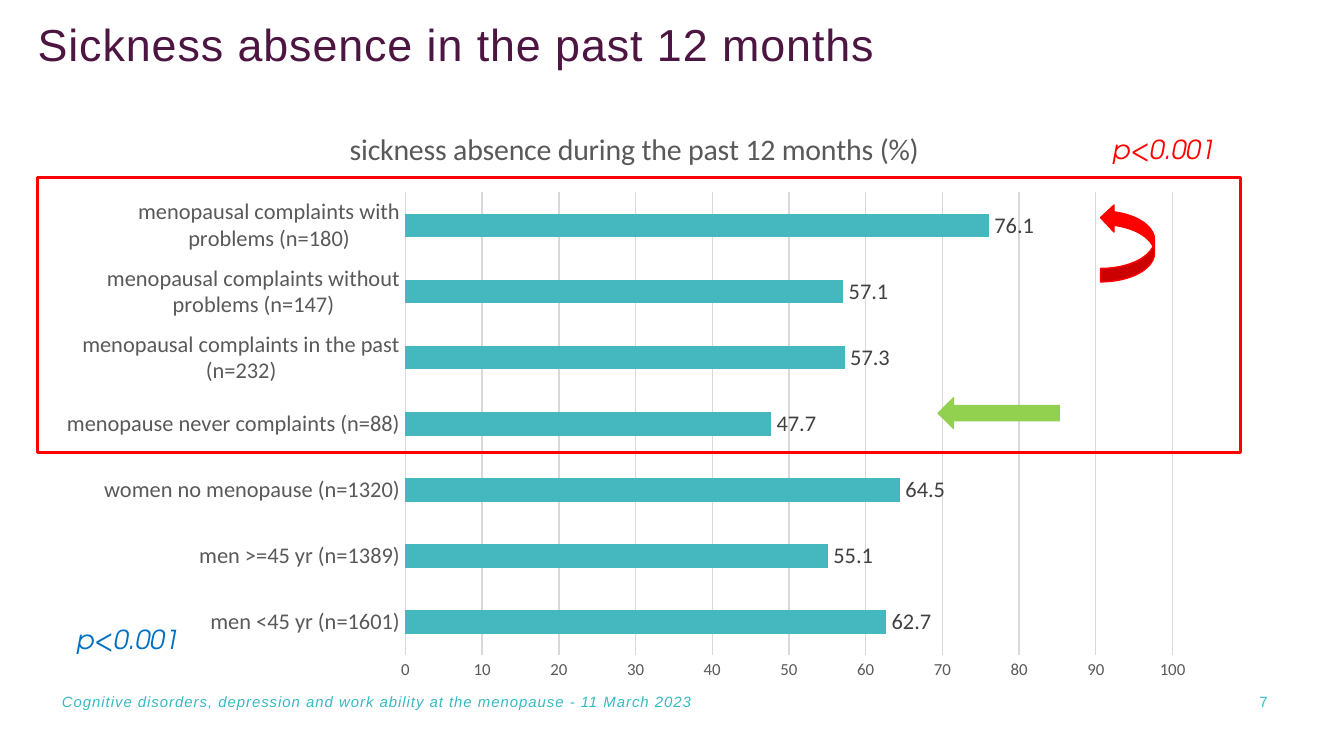
from lxml.etree import SubElement
from pptx import Presentation
from pptx.chart.data import CategoryChartData
from pptx.dml.color import RGBColor
from pptx.enum.chart import XL_CHART_TYPE, XL_LABEL_POSITION, XL_TICK_MARK
from pptx.enum.shapes import MSO_SHAPE
from pptx.enum.text import MSO_ANCHOR, PP_ALIGN
from pptx.oxml import parse_xml
from pptx.oxml.ns import nsdecls, qn
from pptx.util import Cm, Pt

COLORS = {
    "title": "4D1642", "footer": "37B9C2", "bar": "44B8BE", "grid": "D9D9D9",
    "axis": "595959", "label": "404040", "red": "FF0000", "blue": "0070C0",
    "green": "92D050", "white": "FFFFFF",
}
CHART_TITLE = "sickness absence during the past 12 months (%)"
ABSENCE = {
    "men <45 yr (n=1601)": 62.7,
    "men >=45 yr (n=1389)": 55.1,
    "women no menopause (n=1320)": 64.5,
    "menopause never complaints (n=88)": 47.7,
    "menopausal complaints in the past (n=232)": 57.3,
    "menopausal complaints without problems (n=147)": 57.1,
    "menopausal complaints with problems (n=180)": 76.1,
}
PLOT_LAYOUT = {"x": 0.3, "y": 0.15, "w": 0.67, "h": 0.79}


def color(name):
    return RGBColor.from_string(COLORS[name])


def lengths(*values):
    return [Cm(value) for value in values]


def style_font(font, size, color_name, name="Calibri", italic=False):
    font.name, font.size, font.italic, font.bold = name, Pt(size), italic, False
    font.color.rgb = color(color_name)


def fill_text(frame, text, size, color_name, name="Arial", italic=False, spacing=0):
    frame.word_wrap = True
    paragraph = frame.paragraphs[0]
    run = paragraph.add_run()
    run.text = text
    style_font(paragraph.font, size, color_name, name, italic)
    if spacing:
        run._r.get_or_add_rPr().set("spc", str(spacing))
    return paragraph


def remove_margins(frame):
    frame.margin_left = frame.margin_right = frame.margin_top = frame.margin_bottom = 0


def add_title(slide, left, top, width, height):
    title = slide.shapes.title
    title.left, title.top, title.width, title.height = lengths(left, top, width, height)
    title.fill.solid()
    title.fill.fore_color.rgb = color("white")
    frame = title.text_frame
    remove_margins(frame)
    frame.vertical_anchor = MSO_ANCHOR.TOP
    paragraph = fill_text(frame, "Sickness absence in the past 12 months", 24, "title", spacing=50)
    paragraph.alignment = PP_ALIGN.LEFT
    paragraph.line_spacing = 0.8


def add_absence_chart(slide, left, top, width, height):
    data = CategoryChartData()
    data.categories = list(ABSENCE)
    data.add_series(CHART_TITLE, list(ABSENCE.values()))
    chart = slide.shapes.add_chart(
        XL_CHART_TYPE.BAR_CLUSTERED, *lengths(left, top, width, height), data).chart
    chart.has_legend = False
    chart.font.name, chart.font.size = "Calibri", Pt(10)

    # Chart title
    chart.has_title = True
    paragraph = chart.chart_title.text_frame.paragraphs[0]
    paragraph.add_run().text = CHART_TITLE
    style_font(paragraph.font, 16, "axis")

    # Axes and grid
    for axis, size in ((chart.category_axis, 12), (chart.value_axis, 9)):
        axis.major_tick_mark = axis.minor_tick_mark = XL_TICK_MARK.NONE
        style_font(axis.tick_labels.font, size, "axis")
    chart.value_axis.minimum_scale, chart.value_axis.maximum_scale = 0, 100
    chart.value_axis.major_unit = 10
    chart.value_axis.has_major_gridlines = True
    chart.value_axis.format.line.fill.background()
    for line in (chart.category_axis.format.line, chart.value_axis.major_gridlines.format.line):
        line.color.rgb = color("grid")
        line.width = Pt(0.75)

    # Bars and their values
    plot = chart.plots[0]
    plot.gap_width = 182
    plot.vary_by_categories = False
    fill = plot.series[0].format.fill
    fill.solid()
    fill.fore_color.rgb = color("bar")
    plot.has_data_labels = True
    labels = plot.data_labels
    labels.show_value = True
    labels.position = XL_LABEL_POSITION.OUTSIDE_END
    style_font(labels.font, 12, "label")

    # Inner plot area, as shares of the chart
    plot_area = chart._chartSpace.chart.plotArea
    for old_layout in plot_area.findall(qn("c:layout")):
        plot_area.remove(old_layout)
    layout = parse_xml(f"<c:layout {nsdecls('c')}><c:manualLayout/></c:layout>")
    settings = {"layoutTarget": "inner", "xMode": "edge", "yMode": "edge", **PLOT_LAYOUT}
    for tag, value in settings.items():
        SubElement(layout[0], qn(f"c:{tag}")).set("val", str(value))
    plot_area.insert(0, layout)


def add_p_value(slide, left, top, color_name):
    box = slide.shapes.add_textbox(*lengths(left, top, 2.72, 0.86))
    fill_text(box.text_frame, "p<0.001", 14, color_name, "TeX Gyre Adventor", italic=True)


def add_marker(slide, kind, box, color_name, line_width=0.75, filled=True):
    shape = slide.shapes.add_shape(kind, *lengths(*box))
    shape.shadow.inherit = False
    if filled:
        shape.fill.solid()
        shape.fill.fore_color.rgb = color(color_name)
    else:
        shape.fill.background()
    shape.line.color.rgb = color(color_name)
    shape.line.width = Pt(line_width)
    return shape


def add_highlight(slide, left, top, width, height):
    """Frame the menopause groups and point out their differences."""
    add_marker(slide, MSO_SHAPE.RECTANGLE, (left, top, width, height), "red", 1.5, filled=False)
    curved_arrow = add_marker(slide, MSO_SHAPE.CURVED_LEFT_ARROW,
                              (left + 20.09, top + 0.51, 1.02, 1.47), "red")
    curved_arrow._element.spPr.xfrm.set("flipV", "1")
    add_marker(slide, MSO_SHAPE.LEFT_ARROW, (left + 17.02, top + 4.17, 2.29, 0.58), "green")


def add_footer(slide, left, top, width, height):
    number_width = 4.19
    note = slide.shapes.add_textbox(*lengths(left, top, 20.37, height)).text_frame
    remove_margins(note)
    fill_text(note, "Cognitive disorders, depression and work ability at the menopause"
              " - 11 March 2023", 8, "footer", italic=True, spacing=50)
    number = slide.shapes.add_textbox(
        *lengths(left + width - number_width, top, number_width, height)).text_frame
    fill_text(number, "7", 8, "footer", spacing=50).alignment = PP_ALIGN.RIGHT
    for frame in (note, number):
        frame.vertical_anchor = MSO_ANCHOR.MIDDLE


def main():
    presentation = Presentation()
    presentation.slide_width, presentation.slide_height = lengths(25.4, 14.29)
    slide = presentation.slides.add_slide(presentation.slide_layouts[5])
    add_title(slide, 0.71, 0.51, 19.96, 1.55)
    add_absence_chart(slide, 1.17, 1.98, 21.64, 11.07)
    # Both p-values stay clear of the labels and the frame
    add_p_value(slide, 1.2, 11.66, "blue")
    add_p_value(slide, 20.78, 2.4, "red")
    add_footer(slide, 1.17, 12.88, 23.04, 0.76)
    add_highlight(slide, 0.71, 3.35, 22.73, 5.2)
    presentation.save("out.pptx")


if __name__ == "__main__":
    main()
